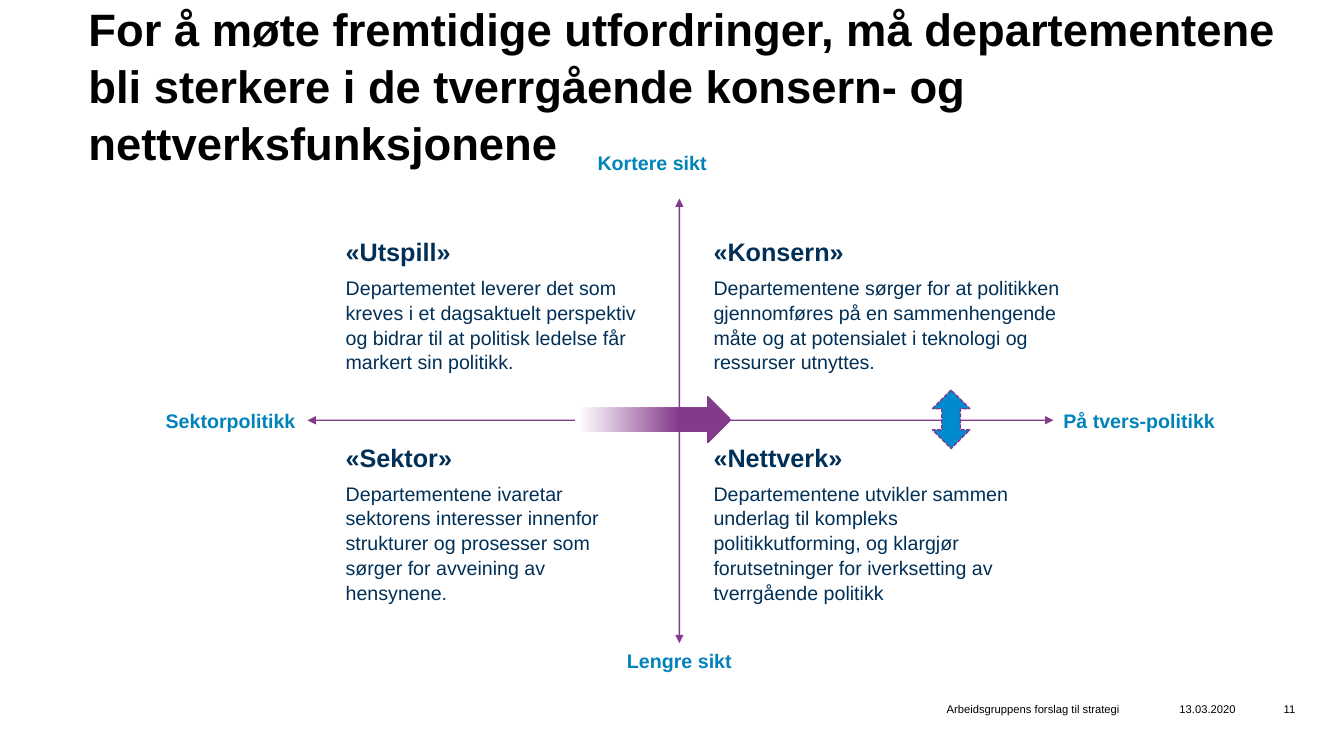
"""Build the slide on sector and cross-cutting policy with its four quadrants."""
from pptx import Presentation
from pptx.dml.color import RGBColor
from pptx.enum.dml import MSO_LINE
from pptx.enum.shapes import MSO_CONNECTOR, MSO_SHAPE
from pptx.enum.text import MSO_ANCHOR, PP_ALIGN
from pptx.oxml import parse_xml
from pptx.oxml.ns import nsdecls
from pptx.util import Inches, Pt

COLORS = {
    "black": "000000",
    "white": "FFFFFF",
    "purple": "843A8A",
    "blue": "008ACF",
    "label": "0082BA",
    "navy": "003057",
}
LINE_SPACING = 1.05

presentation = Presentation()
presentation.slide_width = Inches(13.333)
presentation.slide_height = Inches(7.5)
slide = presentation.slides.add_slide(presentation.slide_layouts[6])


def place(*percentages):
    """Turn alternating horizontal and vertical percentages into lengths."""
    sides = (presentation.slide_width, presentation.slide_height)
    return [int(sides[i % 2] * share / 100) for i, share in enumerate(percentages)]


def add_text(box, paragraphs, color, align=PP_ALIGN.LEFT, anchor=MSO_ANCHOR.TOP):
    """Add a text box whose paragraphs are (text, size, bold, space after)."""
    shape = slide.shapes.add_textbox(*place(*box))
    frame = shape.text_frame
    frame.word_wrap = True
    frame.vertical_anchor = anchor
    for index, (text, size, bold, space_after) in enumerate(paragraphs):
        paragraph = frame.add_paragraph() if index else frame.paragraphs[0]
        paragraph.alignment = align
        paragraph.line_spacing = LINE_SPACING
        paragraph.space_after = Pt(space_after)
        run = paragraph.add_run()
        run.text = text
        run.font.name = "Arial"
        run.font.size = Pt(size)
        run.font.bold = bold
        run.font.color.rgb = RGBColor.from_string(COLORS[color])
    return shape


for left, width, text in [
    (83.7, 8.25, "13.03.2020"),
    (36.68, 46.65, "Arbeidsgruppens forslag til strategi"),
    (92.25, 4.13, "11"),
]:
    footer = add_text((left, 92.13, width, 3.2), [(text, 8, False, 0)],
                      "black", PP_ALIGN.RIGHT, MSO_ANCHOR.MIDDLE)
    footer.text_frame.margin_right = 0

axis_x, axis_y = 50.55, 55.6
axes = []
for ends in [(axis_x, 26.27, axis_x, 84.93), (22.88, axis_y, 78.38, axis_y)]:
    axis = slide.shapes.add_connector(MSO_CONNECTOR.STRAIGHT, *place(*ends))
    axis.line.color.rgb = RGBColor.from_string(COLORS["purple"])
    axis.line.width = Pt(1)
    for tag in ("headEnd", "tailEnd"):
        axis.line._get_or_add_ln().append(
            parse_xml(f'<a:{tag} {nsdecls("a")} type="triangle"/>'))
    axis._element.spPr.append(parse_xml(f'<a:effectLst {nsdecls("a")}/>'))
    axes.append(axis)
vertical_axis, horizontal_axis = axes

labels = {}
for text, left, top, width, align in [
    ("Kortere sikt", 39.45, 19.2, 18.15, PP_ALIGN.CENTER),
    ("Lengre sikt", 42.83, 85.07, 15.45, PP_ALIGN.CENTER),
    ("Sektorpolitikk", 5.85, 53.33, 16.88, PP_ALIGN.RIGHT),
    ("På tvers-politikk", 78.38, 53.33, 12.83, PP_ALIGN.LEFT),
]:
    labels[text] = add_text((left, top, width, 4.53), [(text, 14, True, 0)],
                            "label", align)
vertical_axis.end_connect(labels["Lengre sikt"], 0)
horizontal_axis.end_connect(labels["På tvers-politikk"], 1)

left_column, right_column = 24.98, 52.35
top_row, bottom_row = (30.4, 19.07), (57.6, 22.27)
for left, (top, height), width, heading, body in [
    (left_column, bottom_row, 24.08, "«Sektor»",
     "Departementene ivaretar sektorens interesser innenfor strukturer og "
     "prosesser som sørger for avveining av hensynene."),
    (left_column, top_row, 24.08, "«Utspill»",
     "Departementet leverer det som kreves i et dagsaktuelt perspektiv og "
     "bidrar til at politisk ledelse får markert sin politikk."),
    (right_column, top_row, 27.53, "«Konsern»",
     "Departementene sørger for at politikken gjennomføres på en "
     "sammenhengende måte og at potensialet i teknologi og ressurser utnyttes."),
    (right_column, bottom_row, 26.03, "«Nettverk»",
     "Departementene utvikler sammen underlag til kompleks politikkutforming, "
     "og klargjør forutsetninger for iverksetting av tverrgående politikk"),
]:
    add_text((left, top, width, height),
             [(heading, 18, True, 6), (body, 14, False, 0)], "navy")

shift_arrow = slide.shapes.add_shape(
    MSO_SHAPE.RIGHT_ARROW, *place(42.75, 52.4, 11.63, 6.27))
shift_arrow.shadow.inherit = False
shift_arrow.line.fill.background()
shift_arrow.fill.gradient()
shift_arrow.fill.gradient_angle = 0
for stop, position, color in zip(
        shift_arrow.fill.gradient_stops, (0.03, 0.67), ("white", "purple")):
    stop.position = position
    stop.color.rgb = RGBColor.from_string(COLORS[color])

exchange_arrow = slide.shapes.add_shape(
    MSO_SHAPE.UP_DOWN_ARROW, *place(69.38, 51.6, 2.78, 7.73))
exchange_arrow.shadow.inherit = False
exchange_arrow.fill.solid()
exchange_arrow.fill.fore_color.rgb = RGBColor.from_string(COLORS["blue"])
exchange_arrow.line.color.rgb = RGBColor.from_string(COLORS["purple"])
exchange_arrow.line.width = Pt(1)
exchange_arrow.line.dash_style = MSO_LINE.SQUARE_DOT

add_text((5.85, 2.8, 92.18, 16.67),
         [("For å møte fremtidige utfordringer, må departementene bli sterkere "
           "i de tverrgående konsern- og nettverksfunksjonene", 32.4, True, 0)],
         "black", anchor=MSO_ANCHOR.MIDDLE)

presentation.save("out.pptx")
